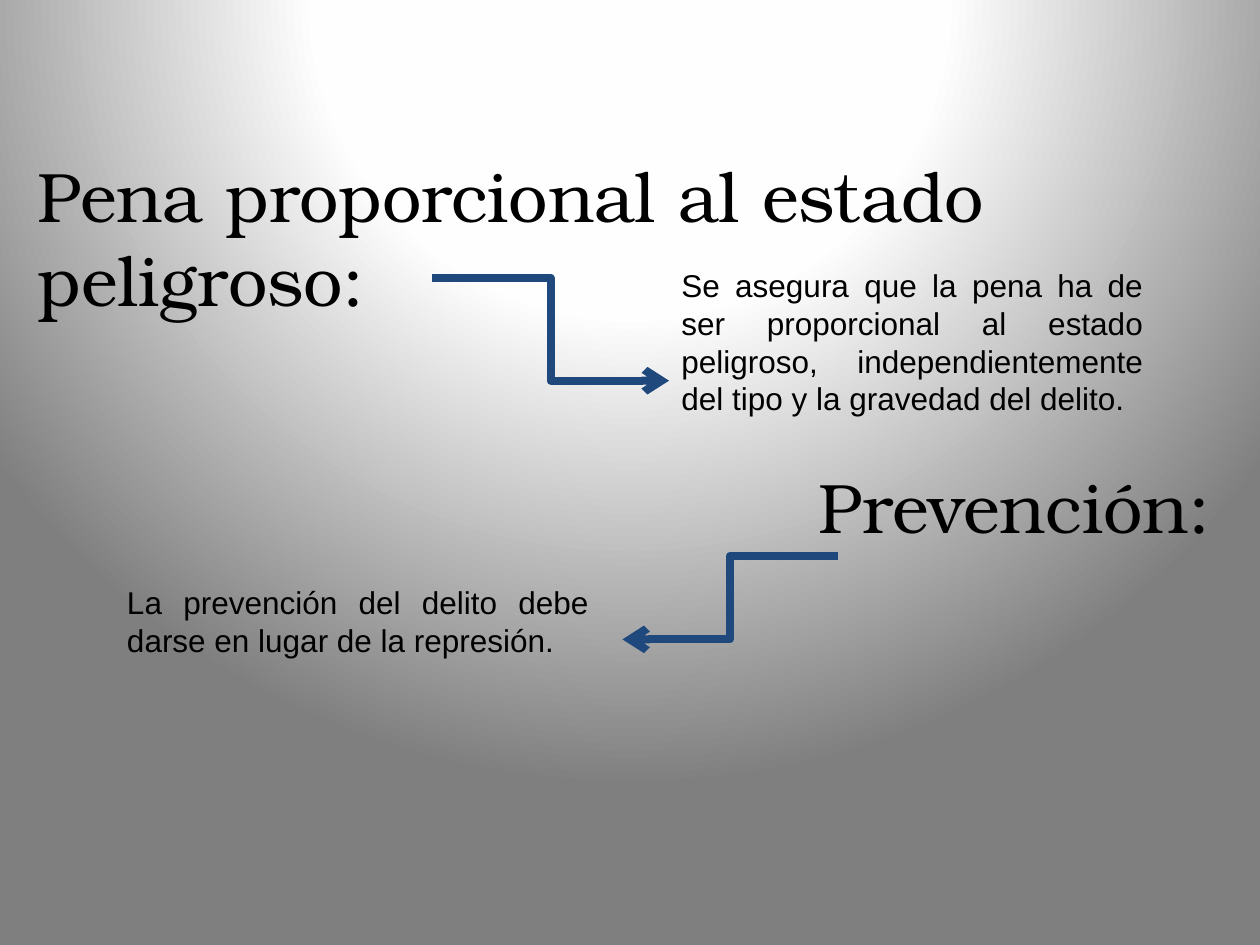
from pptx import Presentation
from pptx.dml.color import RGBColor
from pptx.enum.shapes import MSO_CONNECTOR as Connector
from pptx.enum.text import MSO_ANCHOR as Anchor, MSO_AUTO_SIZE as AutoSize, PP_ALIGN as Align
from pptx.oxml import parse_xml
from pptx.oxml.ns import nsdecls
from pptx.oxml.xmlchemy import OxmlElement
from pptx.util import Inches, Pt

BLACK = RGBColor(0x00, 0x00, 0x00)
NAVY = RGBColor(0x1F, 0x49, 0x7D)
HEADING_FONT, BODY_FONT = "TeX Gyre Bonum", "Arial"
GLOW_STOPS = ((0, "FFFFFF"), (40, "FEFEFE"), (100, "7F7F7F"))
TITLE_ONLY, WIDTH, HEIGHT = 5, Inches(10), Inches(7.5)


def paint_background(slide):
    """Radial glow centred above the top edge."""
    stops = "".join(f'<a:gs pos="{pos * 1000}"><a:srgbClr val="{color}"/></a:gs>'
                    for pos, color in GLOW_STOPS)
    background = parse_xml(
        f'<p:bg {nsdecls("p", "a")}><p:bgPr><a:gradFill rotWithShape="1">'
        f'<a:gsLst>{stops}</a:gsLst><a:path path="circle">'
        '<a:fillToRect l="50000" t="-80000" r="50000" b="180000"/></a:path>'
        '</a:gradFill><a:effectLst/></p:bgPr></p:bg>')
    slide.element.cSld.insert(0, background)


def point_in(box, x, y):
    """Turn shares of a box into a slide position."""
    left, top, width, height = box
    return int(left + x * width), int(top + y * height)


def area_in(box, x, y, width, height):
    return (*point_in(box, x, y), int(width * box[2]), int(height * box[3]))


def write(shape, area, text, font, size, align):
    shape.left, shape.top, shape.width, shape.height = area
    frame = shape.text_frame
    frame.text = text
    frame.word_wrap = True
    frame.auto_size = AutoSize.SHAPE_TO_FIT_TEXT
    frame.vertical_anchor = Anchor.TOP
    para = frame.paragraphs[0]
    para.alignment = align
    span = para.runs[0]
    span.font.name, span.font.size = font, Pt(size)
    span.font.color.rgb = BLACK


def add_bent_arrow(slide, start, end):
    arrow = slide.shapes.add_connector(Connector.ELBOW, *start, *end)
    arrow.line.color.rgb = NAVY
    arrow.line.width = Pt(4.5)
    head = OxmlElement("a:tailEnd")
    head.set("type", "arrow")
    arrow.line._get_or_add_ln().append(head)
    arrow._element.spPr.append(OxmlElement("a:effectLst"))


def add_topic(slide, box, heading_shape, heading, body):
    """Heading with an arrow leading to its explanation, laid out in shares of the box."""
    text, area, align = heading
    write(heading_shape, area_in(box, *area), text, HEADING_FONT, 40, align)
    text, area, start, end = body
    body_area = area_in(box, *area)
    write(slide.shapes.add_textbox(*body_area), body_area, text, BODY_FONT, 18, Align.JUSTIFY)
    add_bent_arrow(slide, point_in(box, *start), point_in(box, *end))


def main():
    deck = Presentation()
    deck.slide_width, deck.slide_height = WIDTH, HEIGHT
    slide = deck.slides.add_slide(deck.slide_layouts[TITLE_ONLY])
    paint_background(slide)

    add_topic(
        slide, (0, Inches(1.16), WIDTH, Inches(2.82)), slide.shapes.title,
        ("Pena proporcional al estado peligroso:", (0.02, 0, 0.95, 0.51), Align.LEFT),
        ("Se asegura que la pena ha de ser proporcional al estado peligroso, "
         "independientemente del tipo y la gravedad del delito.",
         (0.531, 0.32, 0.386, 0.68), (0.343, 0.37), (0.531, 0.66)))

    add_topic(
        slide, (0, Inches(3.63), WIDTH, Inches(1.66)), slide.shapes.add_textbox(0, 0, 0, 0),
        ("Prevención:", (0.018, 0, 0.953, 0.46), Align.RIGHT),
        ("La prevención del delito debe darse en lugar de la represión.",
         (0.091, 0.57, 0.386, 0.43), (0.665, 0.47), (0.494, 0.87)))

    deck.save("out.pptx")


if __name__ == "__main__":
    main()
